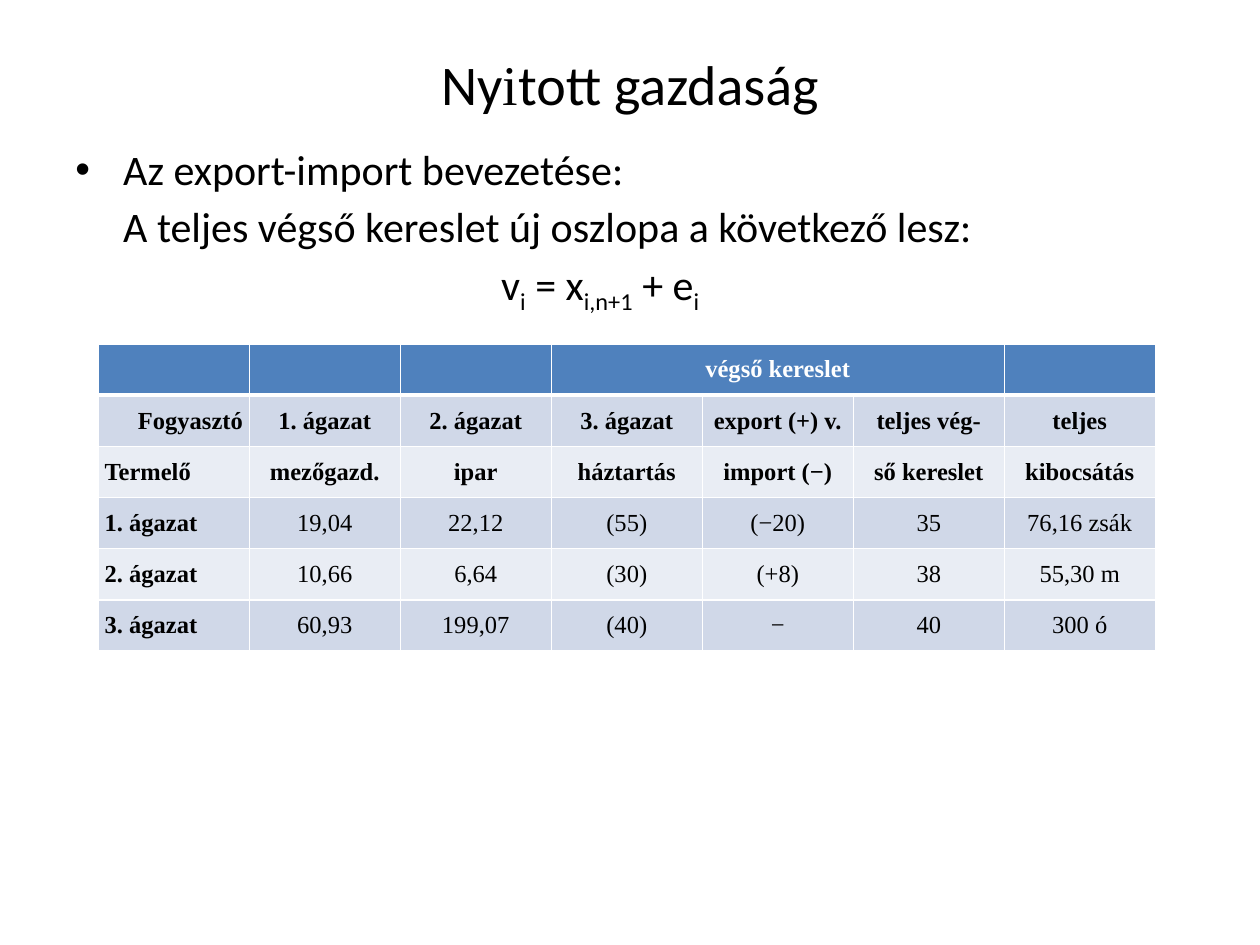
from lxml import etree
from pptx import Presentation
from pptx import util as u
from pptx.dml.color import RGBColor
from pptx.enum import text
from pptx.oxml import ns

COLORS = {"ink": "000000", "white": "FFFFFF", "header": "4F81BD",
          "band_dark": "D0D8E8", "band_light": "E9EDF4"}
SANS, SERIF = "Calibri", "Times New Roman"
AL = text.PP_ALIGN

ROWS = [
    ["", "", "", "végső kereslet", "", "", ""],
    ["Fogyasztó", "1. ágazat", "2. ágazat", "3. ágazat", "export (+) v.", "teljes vég-", "teljes"],
    ["Termelő", "mezőgazd.", "ipar", "háztartás", "import (−)", "ső kereslet", "kibocsátás"],
    ["1. ágazat", "19,04", "22,12", "(55)", "(−20)", "35", "76,16 zsák"],
    ["2. ágazat", "10,66", "6,64", "(30)", "(+8)", "38", "55,30 m"],
    ["3. ágazat", "60,93", "199,07", "(40)", "−", "40", "300 ó"],
]


def add_run(p, content, font=SANS, size=24, color="ink", bold=False, baseline=0):
    r = p.add_run()
    r.text = content
    r.font.name, r.font.size, r.font.bold = font, u.Pt(size), bold
    r.font.color.rgb = RGBColor.from_string(COLORS[color])
    if baseline:
        r.font._element.set("baseline", str(baseline * 1000))
    return r


class SlideBuilder:
    def __init__(self, s):
        self.s = s

    def text_box(self, x, y, w, h, anchor=text.MSO_ANCHOR.TOP):
        sp = self.s.shapes.add_textbox(*map(u.Inches, (x, y, w, h)))
        tf = sp.text_frame
        tf.word_wrap = True
        tf.vertical_anchor = anchor
        return tf

    def paragraph(self, p, left=0.38, bullet=None):
        p.space_before = u.Pt(4)
        pPr = p._p.get_or_add_pPr()
        pPr.set("marL", str(u.Inches(left)))
        if bullet:
            pPr.set("indent", str(-u.Inches(left)))
            etree.SubElement(pPr, ns.qn("a:buFont")).set("typeface", "Arial")
            etree.SubElement(pPr, ns.qn("a:buChar")).set("char", bullet)
        return p

    def borders(self, cell, **widths):
        tcPr = cell._tc.get_or_add_tcPr()
        for side in "LRTB":
            ln = etree.SubElement(tcPr, ns.qn("a:ln" + side))
            ln.set("w", str(u.Pt(widths.get(side, 1))))
            fill = etree.SubElement(ln, ns.qn("a:solidFill"))
            etree.SubElement(fill, ns.qn("a:srgbClr")).set("val", COLORS["white"])

    def cell(self, cell, content, fill, align, color, bold, **widths):
        self.borders(cell, **widths)
        cell.fill.solid()
        cell.fill.fore_color.rgb = RGBColor.from_string(COLORS[fill])
        cell.margin_left = cell.margin_right = u.Inches(0.05)
        cell.margin_top = cell.margin_bottom = 0
        cell.vertical_anchor = text.MSO_ANCHOR.MIDDLE
        if content:
            p = cell.text_frame.paragraphs[0]
            p.alignment = align
            add_run(p, content, font=SERIF, size=14, color=color, bold=bold)

    def table(self, x, y, w, h, rows):
        n_cols = len(rows[0])
        frame = self.s.shapes.add_table(len(rows), n_cols, *map(u.Inches, (x, y, w, h)))
        table = frame.table
        for i, row in enumerate(rows):
            header = i == 0
            fill = "header" if header else ("band_dark" if i % 2 else "band_light")
            # A thick rule parts the header from the body
            widths = {0: {"B": 3}, 1: {"T": 3}}.get(i, {})
            for j, content in enumerate(row):
                align = AL.CENTER
                if j == 0:
                    align = AL.RIGHT if i == 1 else AL.JUSTIFY
                self.cell(table.cell(i, j), content, fill, align,
                          "white" if header else "ink", i < 3 or j == 0, **widths)
        return table


def main():
    prs = Presentation()
    prs.slide_width, prs.slide_height = u.Inches(10), u.Inches(7.5)
    b = SlideBuilder(prs.slides.add_slide(prs.slide_layouts[6]))

    # Title
    p = b.text_box(0.5, 0.3, 9, 0.72, text.MSO_ANCHOR.MIDDLE).paragraphs[0]
    p.alignment = AL.CENTER
    for content, font in (("Ny", SANS), ("i", SERIF), ("tott gazdaság", SANS)):
        add_run(p, content, font=font, size=32)

    # Body text and formula
    tf = b.text_box(0.5, 1.09, 9, 5.61)
    add_run(b.paragraph(tf.paragraphs[0], bullet="•"), "Az export-import bevezetése:")
    add_run(b.paragraph(tf.add_paragraph()),
            "A teljes végső kereslet új oszlopa a következő lesz:")
    p = b.paragraph(tf.add_paragraph(), left=3.38)
    for base, sub in (("v", "i"), (" = x", "i,n+1"), (" + e", "i")):
        add_run(p, base)
        add_run(p, sub, baseline=-25)

    # Input-output table
    table = b.table(0.78, 2.73, 8.39, 2.44, ROWS)
    table.cell(0, 3).merge(table.cell(0, 5))

    prs.save("out.pptx")


if __name__ == "__main__":
    main()
